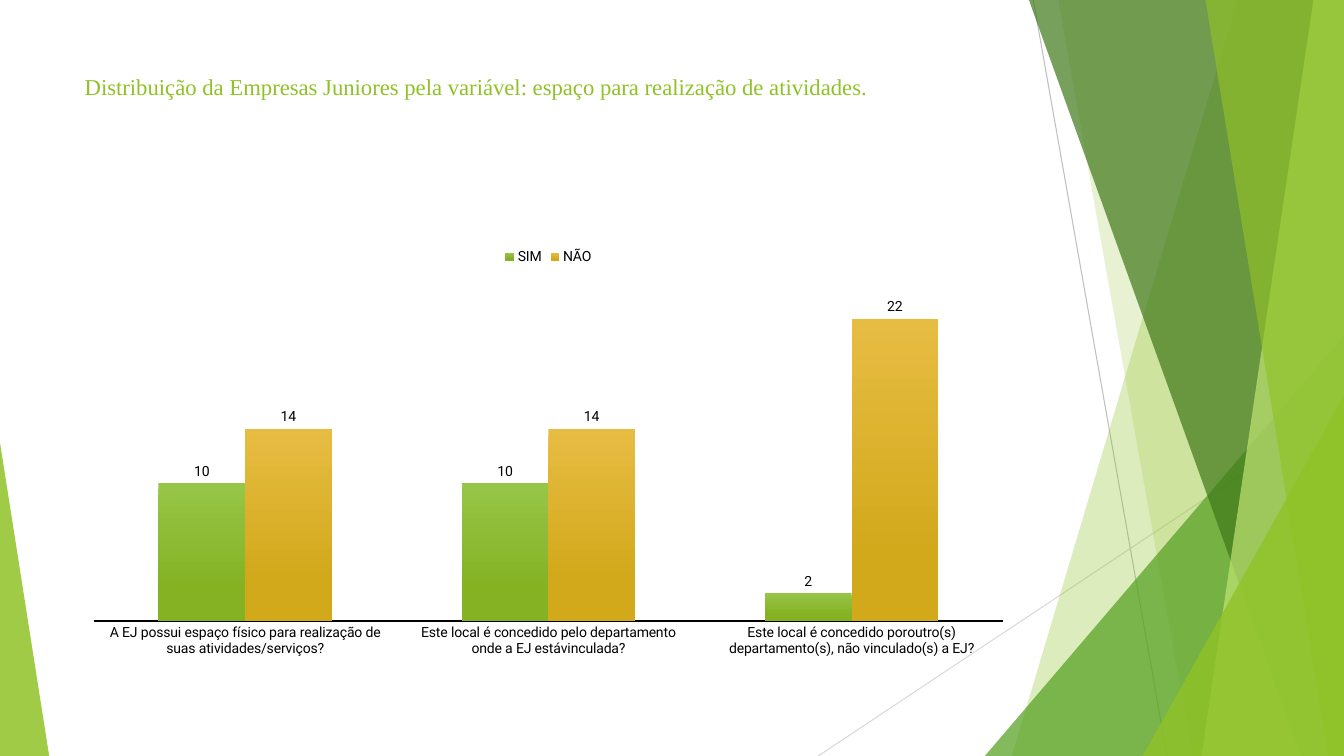
from lxml.etree import SubElement
from pptx import Presentation
from pptx.chart.data import CategoryChartData
from pptx.dml.color import RGBColor
from pptx.enum.chart import XL_CHART_TYPE, XL_LABEL_POSITION, XL_LEGEND_POSITION, XL_TICK_MARK
from pptx.enum.shapes import MSO_CONNECTOR, MSO_SHAPE
from pptx.enum.text import MSO_ANCHOR, MSO_AUTO_SIZE, PP_ALIGN
from pptx.oxml.ns import qn
from pptx.util import Cm, Pt

WIDTH, HEIGHT = 33.87, 19.05
COLORS = {
    "lime": "90C226", "leaf": "54A021", "forest": "3F7819", "pale": "C0E474",
    "gray": "BFBFBF", "light_gray": "D9D9D9", "black": "000000",
    "yes_top": "97C547", "yes_bottom": "84B223",
    "no_top": "E7BC43", "no_bottom": "D2A91B",
}


def color(name):
    return RGBColor.from_string(COLORS[name])


def set_all(target, values):
    for name, value in values.items():
        setattr(target, name, value)


class SlideBuilder:
    """Holds the chart text style and the slide being filled."""

    chart_font = {"name": "Roboto", "size": Pt(10), "bold": False}
    title_font = {"name": "Times New Roman", "size": Pt(16.2), "bold": False}

    def __init__(self, deck):
        self.page = deck.slides.add_slide(deck.slide_layouts[5])
        self.shapes = self.page.shapes

    def style_font(self, font, values, color_name):
        set_all(font, values)
        font.color.rgb = color(color_name)

    def paint(self, shape, color_name, opacity):
        shape.shadow.inherit = False
        shape.line.fill.background()
        shape.fill.solid()
        shape.fill.fore_color.rgb = color(color_name)
        tint = next(shape.element.spPr.iter(qn("a:srgbClr")))
        SubElement(tint, qn("a:alpha")).set("val", str(opacity * 1000))

    def line(self, start, end, color_name):
        connector = self.shapes.add_connector(
            MSO_CONNECTOR.STRAIGHT, *map(Cm, start + end))
        connector.line.width = Pt(0.75)
        connector.line.color.rgb = color(color_name)
        SubElement(connector.element.spPr, qn("a:effectLst"))

    def band(self, top_left, bottom_left, color_name, opacity):
        """Fill from a slanted left edge to the right edge of the slide."""
        outline = self.shapes.build_freeform(Cm(top_left), Cm(0))
        corners = [(WIDTH, 0), (WIDTH, HEIGHT), (bottom_left, HEIGHT)]
        outline.add_line_segments([(Cm(x), Cm(y)) for x, y in corners])
        self.paint(outline.convert_to_shape(), color_name, opacity)

    def triangle(self, left, width, height, apex, color_name, opacity):
        """Stand a triangle on the slide bottom; apex is 0 (left) or 1 (right)."""
        shape = self.shapes.add_shape(
            MSO_SHAPE.ISOSCELES_TRIANGLE,
            Cm(left), Cm(HEIGHT - height), Cm(width), Cm(height))
        shape.adjustments[0] = apex
        self.paint(shape, color_name, opacity)

    def title(self, text, left, top, width, height):
        box = self.shapes.title
        box.element.getparent().append(box.element)
        set_all(box, {"left": Cm(left), "top": Cm(top),
                      "width": Cm(width), "height": Cm(height)})
        set_all(box.text_frame, {"word_wrap": True, "auto_size": MSO_AUTO_SIZE.NONE,
                                 "vertical_anchor": MSO_ANCHOR.TOP})
        para = box.text_frame.paragraphs[0]
        para.alignment = PP_ALIGN.LEFT
        span = para.add_run()
        span.text = text
        self.style_font(span.font, self.title_font, "lime")

    def column_chart(self, categories, series, left, top, width, height):
        data = CategoryChartData()
        data.categories = categories
        for name, values, _ in series:
            data.add_series(name, values)
        chart = self.shapes.add_chart(
            XL_CHART_TYPE.COLUMN_CLUSTERED,
            Cm(left), Cm(top), Cm(width), Cm(height), data).chart
        set_all(chart, {"has_title": False, "has_legend": True})
        set_all(chart.legend, {"position": XL_LEGEND_POSITION.TOP,
                               "include_in_layout": False})
        set_all(chart.value_axis, {"visible": False, "minimum_scale": 0,
                                   "has_major_gridlines": False})
        axis = chart.category_axis
        set_all(axis, {"major_tick_mark": XL_TICK_MARK.NONE,
                       "minor_tick_mark": XL_TICK_MARK.NONE})
        axis.format.line.width = Pt(2)
        axis.format.line.color.rgb = color("black")
        plot = chart.plots[0]
        set_all(plot, {"gap_width": 150, "overlap": 0, "vary_by_categories": False,
                       "has_data_labels": True})
        set_all(plot.data_labels, {"show_value": True,
                                   "position": XL_LABEL_POSITION.OUTSIDE_END})
        for part in (chart, chart.legend, axis.tick_labels, plot.data_labels):
            self.style_font(part.font, self.chart_font, "black")
        for bars, (_, _, shades) in zip(plot.series, series):
            self.shade(bars.format.fill, shades)

    def shade(self, fill, shades):
        """Blend two colours from top to bottom."""
        fill.gradient()
        fill.gradient_angle = 270
        for stop, position, shade in zip(fill.gradient_stops, (0, 0.78), shades):
            stop.position = position
            stop.color.rgb = color(shade)


def main():
    deck = Presentation()
    set_all(deck, {"slide_width": Cm(WIDTH), "slide_height": Cm(HEIGHT)})
    slide = SlideBuilder(deck)

    slide.line((26.04, 0), (29.41, HEIGHT), "gray")
    slide.line((WIDTH, 10.24), (20.62, HEIGHT), "light_gray")
    slide.band(31.19, 25.5, "lime", 30)
    slide.band(26.67, 30.05, "lime", 20)
    slide.triangle(24.82, 9.05, 10.59, 1, "leaf", 72)
    slide.band(25.93, 32.79, "forest", 70)
    slide.band(33.1, 30.28, "pale", 70)
    slide.band(30.38, 33.48, "lime", 65)
    slide.triangle(28.8, 5.07, 9.07, 1, "lime", 80)
    slide.triangle(0, 1.24, 7.9, 0, "lime", 85)

    slide.title(
        "Distribuição da Empresas Juniores pela variável: "
        "espaço para realização de atividades.", 1.88, 1.7, 23.88, 2.41)
    slide.column_chart(
        ["A EJ possui espaço físico para realização de suas atividades/serviços?",
         "Este local é concedido pelo departamento onde a EJ estávinculada?",
         "Este local é concedido poroutro(s) departamento(s), não vinculado(s) a EJ?"],
        [("SIM", (10, 10, 2), ("yes_top", "yes_bottom")),
         ("NÃO", (14, 14, 22), ("no_top", "no_bottom"))],
        1.88, 5.99, 23.88, 10.77)
    deck.save("out.pptx")


if __name__ == "__main__":
    main()
